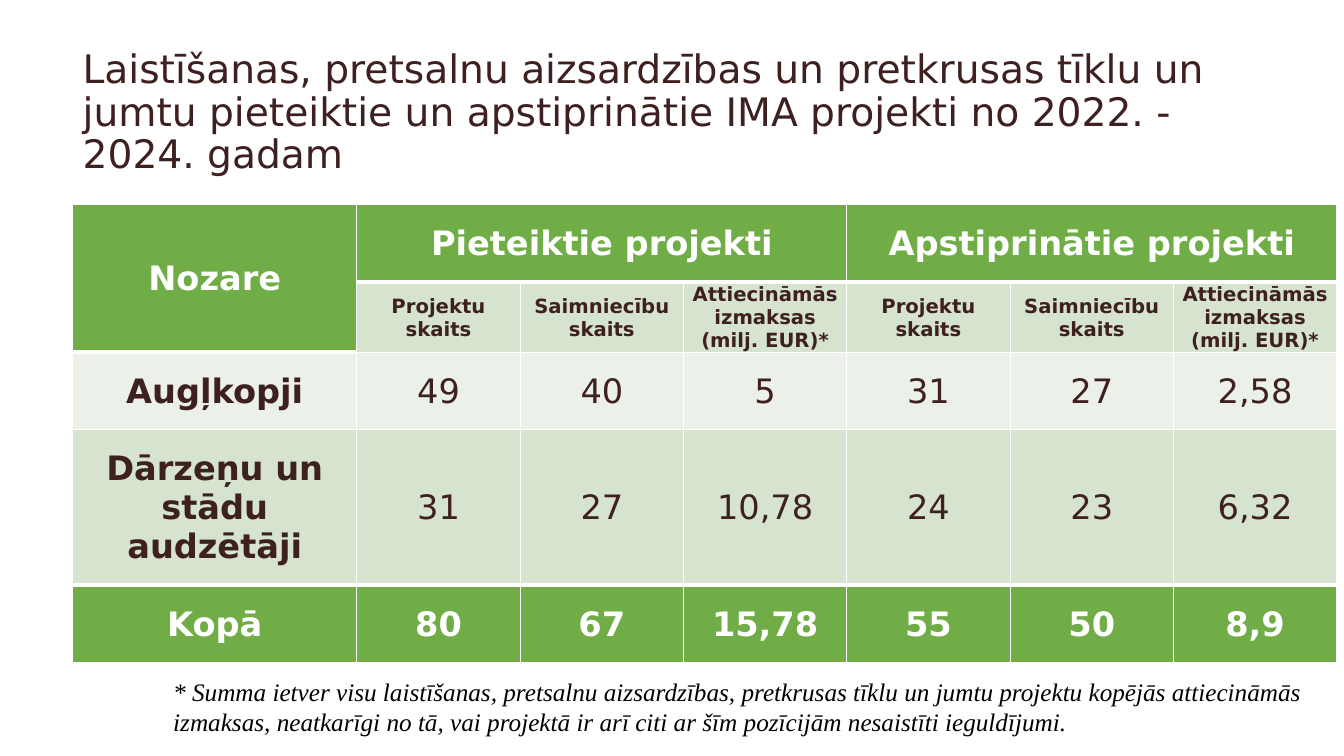
from lxml import etree
from pptx import Presentation
from pptx import util as u
from pptx.dml.color import RGBColor
from pptx.enum import text
from pptx.oxml.ns import qn

GREEN, PALE, MIST = "70AD47", "D5E3CF", "EBF1E9"
WHITE, BROWN, BLACK = "FFFFFF", "3F2021", "000000"
THIN, THICK = 1, 3


def color(value):
    return RGBColor.from_string(value)


class SlideBuilder:
    sans = "DejaVu Sans"
    serif = "Times New Roman"

    def __init__(self, slide):
        self.slide = slide

    def add_span(self, frame, wording, size, ink, font=None, bold=False, italic=False):
        para = frame.paragraphs[0]
        span = para.add_run()
        span.text = wording
        span.font.name = font or self.sans
        span.font.size = u.Pt(size)
        span.font.bold = bold
        span.font.italic = italic
        span.font.color.rgb = color(ink)
        return para

    def place(self, shape, left, top, width, height):
        shape.left, shape.top = u.Inches(left), u.Inches(top)
        shape.width, shape.height = u.Inches(width), u.Inches(height)

    def title(self, wording, *bounds):
        title = self.slide.shapes.title
        self.place(title, *bounds)
        frame = title.text_frame
        frame.word_wrap = True
        frame.auto_size = text.MSO_AUTO_SIZE.NONE
        frame.vertical_anchor = text.MSO_ANCHOR.MIDDLE
        para = self.add_span(frame, wording, 28, BROWN)
        para.alignment = text.PP_ALIGN.LEFT
        para.line_spacing = 0.9

    def note(self, wording, *bounds):
        box = self.slide.shapes.add_textbox(*map(u.Inches, bounds))
        frame = box.text_frame
        frame.word_wrap = True
        frame.auto_size = text.MSO_AUTO_SIZE.SHAPE_TO_FIT_TEXT
        self.add_span(frame, wording, 18, BLACK, self.serif, italic=True)

    def table(self, left, top, widths, heights):
        bounds = map(u.Inches, (left, top, sum(widths), sum(heights)))
        table = self.slide.shapes.add_table(len(heights), len(widths), *bounds).table
        for column, width in zip(table.columns, widths):
            column.width = u.Inches(width)
        for row, height in zip(table.rows, heights):
            row.height = u.Inches(height)
        return table

    def borders(self, cell, top, bottom):
        properties = cell._tc.get_or_add_tcPr()
        for side, width in (("L", THIN), ("R", THIN), ("T", top), ("B", bottom)):
            line = etree.SubElement(properties, qn(f"a:ln{side}"), w=str(u.Pt(width)))
            fill = etree.SubElement(line, qn("a:solidFill"))
            etree.SubElement(fill, qn("a:srgbClr"), val=WHITE)

    def cell(self, cell, wording, fill, size, ink, bold, top, bottom):
        self.borders(cell, top, bottom)
        cell.fill.solid()
        cell.fill.fore_color.rgb = color(fill)
        cell.vertical_anchor = text.MSO_ANCHOR.MIDDLE
        cell.margin_left = cell.margin_right = cell.margin_top = u.Inches(0.01)
        cell.margin_bottom = 0
        if wording:
            para = self.add_span(cell.text_frame, wording, size, ink, bold=bold)
            para.alignment = text.PP_ALIGN.CENTER


def main():
    deck = Presentation()
    deck.slide_width, deck.slide_height = u.Inches(13.33), u.Inches(7.5)
    builder = SlideBuilder(deck.slides.add_slide(deck.slide_layouts[5]))

    builder.title(
        "Laistīšanas, pretsalnu aizsardzības un pretkrusas tīklu un jumtu "
        "pieteiktie un apstiprinātie IMA projekti no 2022. - 2024. gadam",
        0.72, 0.4, 11.5, 1.45)

    measures = ["Projektu skaits", "Saimniecību skaits",
                "Attiecināmās izmaksas (milj. EUR)*"]
    rows = [
        ["Nozare", "Pieteiktie projekti", "", "", "Apstiprinātie projekti", "", ""],
        ["", *measures, *measures],
        ["Augļkopji", "49", "40", "5", "31", "27", "2,58"],
        ["Dārzeņu un stādu audzētāji", "31", "27", "10,78", "24", "23", "6,32"],
        ["Kopā", "80", "67", "15,78", "55", "50", "8,9"],
    ]
    styles = [
        (GREEN, 24, WHITE, True, THIN, THICK),
        (PALE, 14, BROWN, True, THICK, THIN),
        (MIST, 24, BROWN, False, THIN, THIN),
        (PALE, 24, BROWN, False, THIN, THICK),
        (GREEN, 24, WHITE, True, THICK, THIN),
    ]
    table = builder.table(0.72, 2.03, [2.82] + [1.62] * 6,
                          [0.77, 0.67, 0.77, 1.54, 0.77])
    for first, last in (((0, 0), (1, 0)), ((0, 1), (0, 3)), ((0, 4), (0, 6))):
        table.cell(*first).merge(table.cell(*last))
    for row, (wordings, style) in enumerate(zip(rows, styles)):
        fill, size, ink, bold, top, bottom = style
        for column, wording in enumerate(wordings):
            sector = column == 0
            if sector and row == 1:
                fill_here, top_here, bottom_here = GREEN, THIN, THICK
            else:
                fill_here, bottom_here = fill, bottom
                top_here = THICK if sector and row == 2 else top
            builder.cell(table.cell(row, column), wording, fill_here, size, ink,
                         bold or sector, top_here, bottom_here)

    builder.note(
        "* Summa ietver visu laistīšanas, pretsalnu aizsardzības, pretkrusas tīklu "
        "un jumtu projektu kopējās attiecināmās izmaksas, neatkarīgi no tā, vai "
        "projektā ir arī citi ar šīm pozīcijām nesaistīti ieguldījumi.",
        1.62, 6.66, 11.5, 0.71)
    deck.save("out.pptx")


if __name__ == "__main__":
    main()
